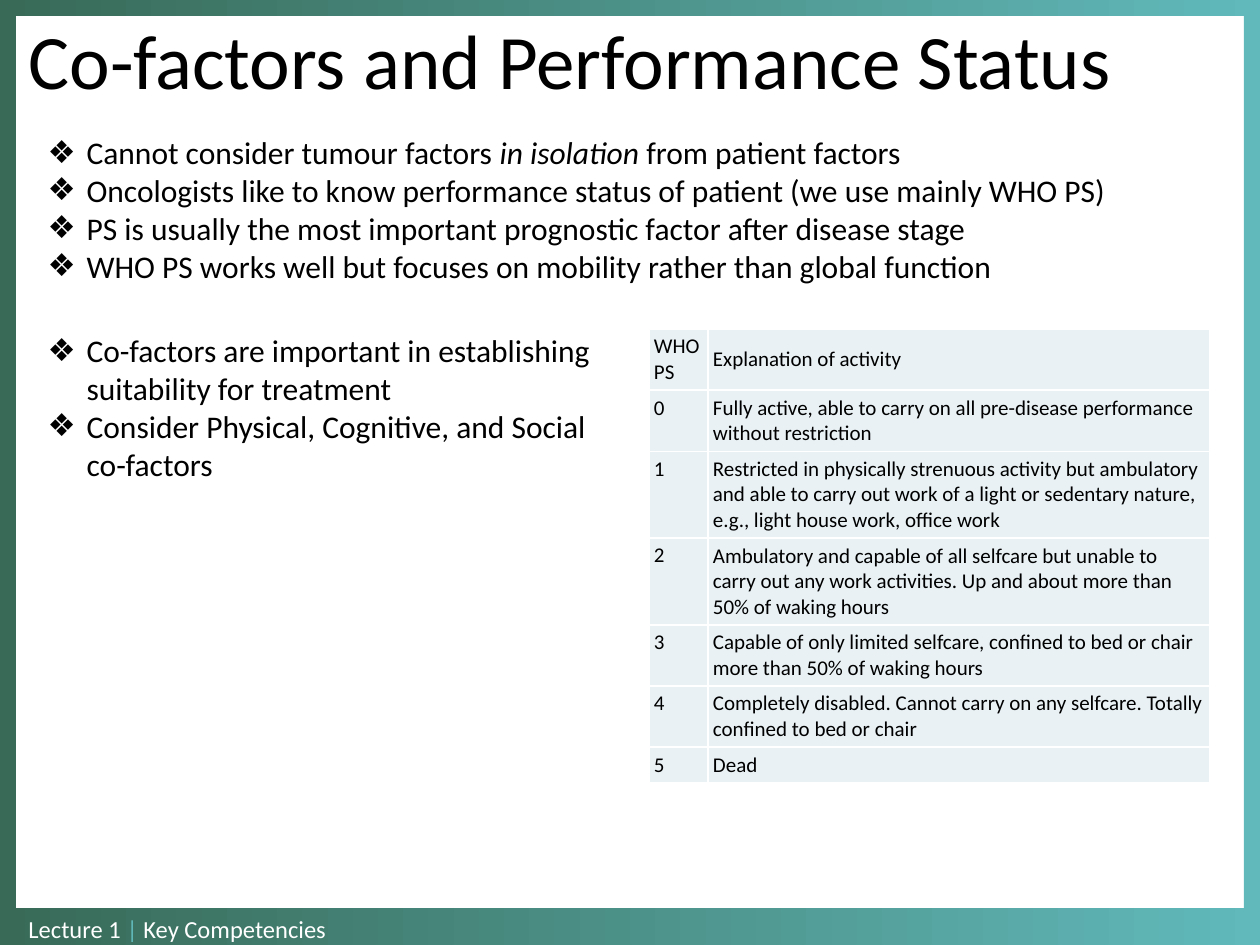
from lxml import etree
from pptx import Presentation
from pptx.dml.color import RGBColor
from pptx.enum.shapes import MSO_SHAPE
from pptx.enum.text import MSO_ANCHOR, MSO_AUTO_SIZE, PP_ALIGN
from pptx.oxml.ns import qn
from pptx.util import Emu, Pt

FONT = "Calibri"
GREEN = RGBColor(0x38, 0x6A, 0x57)
TEAL = RGBColor(0x61, 0xB9, 0xBB)
PALE = RGBColor(0xE9, 0xF1, 0xF5)
WHITE = RGBColor(0xFF, 0xFF, 0xFF)
BLACK = RGBColor(0x00, 0x00, 0x00)

# Boxes are left, top, width, height in px
SLIDE_SIZE = (1260, 945)
FRAME = [
    ((0, 0, 1260, 16), (GREEN, TEAL)),
    ((0, 908, 1260, 37), (GREEN, TEAL)),
    ((0, 8, 16, 937), (GREEN,)),
    ((1244, 3, 16, 937), (TEAL,)),
]
FOOTER_BOX = (16, 908, 673, 43)
FOOTER = [("Lecture 1 ", WHITE), ("| ", TEAL), ("Key Competencies", WHITE)]
TITLE_BOX = (16, 6, 1226, 106)
TITLE = "Co-factors and Performance Status"

# Each bullet is a list of (text, italic) runs
LISTS = [
    ((35, 127, 1171, 165), [
        [("Cannot consider tumour factors ", False), ("in isolation ", True),
         ("from patient factors", False)],
        [("Oncologists like to know performance status of patient (we use mainly WHO PS)", False)],
        [("PS is usually the most important prognostic factor after disease stage", False)],
        [("WHO PS works well but focuses on mobility rather than global function", False)],
    ]),
    ((35, 325, 605, 165), [
        [("Co-factors are important in establishing suitability for treatment", False)],
        [("Consider Physical, Cognitive, and Social co-factors", False)],
    ]),
]
BULLET_INDENT = 39

TABLE_ORIGIN = (649, 329)
COLUMN_WIDTHS = (59, 502)
CELL_MARGIN = 5
# Row height, then the two cells
ROWS = [
    (61, "WHO PS", "Explanation of activity"),
    (61, "0", "Fully active, able to carry on all pre-disease performance without restriction"),
    (86, "1", "Restricted in physically strenuous activity but ambulatory and able to carry out "
              "work of a light or sedentary nature, e.g., light house work, office work"),
    (86, "2", "Ambulatory and capable of all selfcare but unable to carry out any work "
              "activities. Up and about more than 50% of waking hours"),
    (61, "3", "Capable of only limited selfcare, confined to bed or chair more than 50% of "
              "waking hours"),
    (61, "4", "Completely disabled. Cannot carry on any selfcare. Totally confined to bed or chair"),
    (35, "5", "Dead"),
]


def px(length):
    return Emu(round(length * 914400 / 126))


def place(shape, box):
    shape.left, shape.top, shape.width, shape.height = map(px, box)


def set_font(font, size, color):
    font.name, font.size, font.color.rgb = FONT, Pt(size), color


def set_up_frame(text_frame):
    text_frame.word_wrap = True
    text_frame.auto_size = MSO_AUTO_SIZE.NONE
    text_frame.vertical_anchor = MSO_ANCHOR.TOP


def add_bar(slide, box, colors):
    bar = slide.shapes.add_shape(MSO_SHAPE.RECTANGLE, *map(px, box))
    bar.shadow.inherit = False
    bar.line.fill.background()
    if len(colors) == 1:
        bar.fill.solid()
        bar.fill.fore_color.rgb = colors[0]
    else:
        bar.fill.gradient()
        bar.fill.gradient_angle = 0
        for stop, color in zip(bar.fill.gradient_stops, colors):
            stop.color.rgb = color


def add_footer(slide):
    text_frame = slide.shapes.add_textbox(*map(px, FOOTER_BOX)).text_frame
    set_up_frame(text_frame)
    for text, color in FOOTER:
        run = text_frame.paragraphs[0].add_run()
        run.text = text
        set_font(run.font, 14, color)


def fill_title(title):
    place(title, TITLE_BOX)
    set_up_frame(title.text_frame)
    title.text_frame.text = TITLE
    paragraph = title.text_frame.paragraphs[0]
    paragraph.alignment = PP_ALIGN.LEFT
    set_font(paragraph.font, 44, BLACK)


def set_bullet(paragraph):
    properties = paragraph._p.get_or_add_pPr()
    properties.set("marL", str(px(BULLET_INDENT)))
    properties.set("indent", str(-px(BULLET_INDENT)))
    bullet = etree.Element(qn("a:buChar"), char="❖")
    properties.insert_element_before(bullet, "a:tabLst", "a:defRPr", "a:extLst")


def fill_list(body, box, bullets):
    place(body, box)
    text_frame = body.text_frame
    set_up_frame(text_frame)
    for index, runs in enumerate(bullets):
        paragraph = text_frame.add_paragraph() if index else text_frame.paragraphs[0]
        paragraph.space_before = Pt(0)
        set_font(paragraph.font, 18, BLACK)
        set_bullet(paragraph)
        for text, italic in runs:
            run = paragraph.add_run()
            run.text = text
            if italic:
                run.font.italic = True


def set_borders(cell):
    properties = cell._tc.get_or_add_tcPr()
    for index, side in enumerate(("lnL", "lnR", "lnT", "lnB")):
        line = etree.Element(qn(f"a:{side}"), w=str(Pt(1)))
        fill = etree.SubElement(line, qn("a:solidFill"))
        etree.SubElement(fill, qn("a:srgbClr"), val=str(WHITE))
        properties.insert(index, line)


def fill_cell(cell, text, anchor):
    cell.text = text
    cell.vertical_anchor = anchor
    cell.margin_left = cell.margin_right = px(CELL_MARGIN)
    cell.margin_top = cell.margin_bottom = px(CELL_MARGIN)
    cell.fill.solid()
    cell.fill.fore_color.rgb = PALE
    set_borders(cell)
    set_font(cell.text_frame.paragraphs[0].font, 12, BLACK)


def add_status_table(slide):
    size = (sum(COLUMN_WIDTHS), sum(row[0] for row in ROWS))
    table = slide.shapes.add_table(
        len(ROWS), len(COLUMN_WIDTHS), *map(px, TABLE_ORIGIN + size)).table
    table.first_row = table.horz_banding = False
    for column, width in zip(table.columns, COLUMN_WIDTHS):
        column.width = px(width)
    for row, (height, status, explanation) in zip(table.rows, ROWS):
        row.height = px(height)
        fill_cell(row.cells[0], status, MSO_ANCHOR.TOP)
        fill_cell(row.cells[1], explanation, MSO_ANCHOR.MIDDLE)


def main():
    presentation = Presentation()
    presentation.slide_width, presentation.slide_height = map(px, SLIDE_SIZE)
    slide = presentation.slides.add_slide(presentation.slide_layouts[3])
    for box, colors in FRAME:
        add_bar(slide, box, colors)
    add_footer(slide)
    fill_title(slide.shapes.title)
    for index, (box, bullets) in enumerate(LISTS, start=1):
        fill_list(slide.placeholders[index], box, bullets)
    add_status_table(slide)
    presentation.save("out.pptx")


if __name__ == "__main__":
    main()
